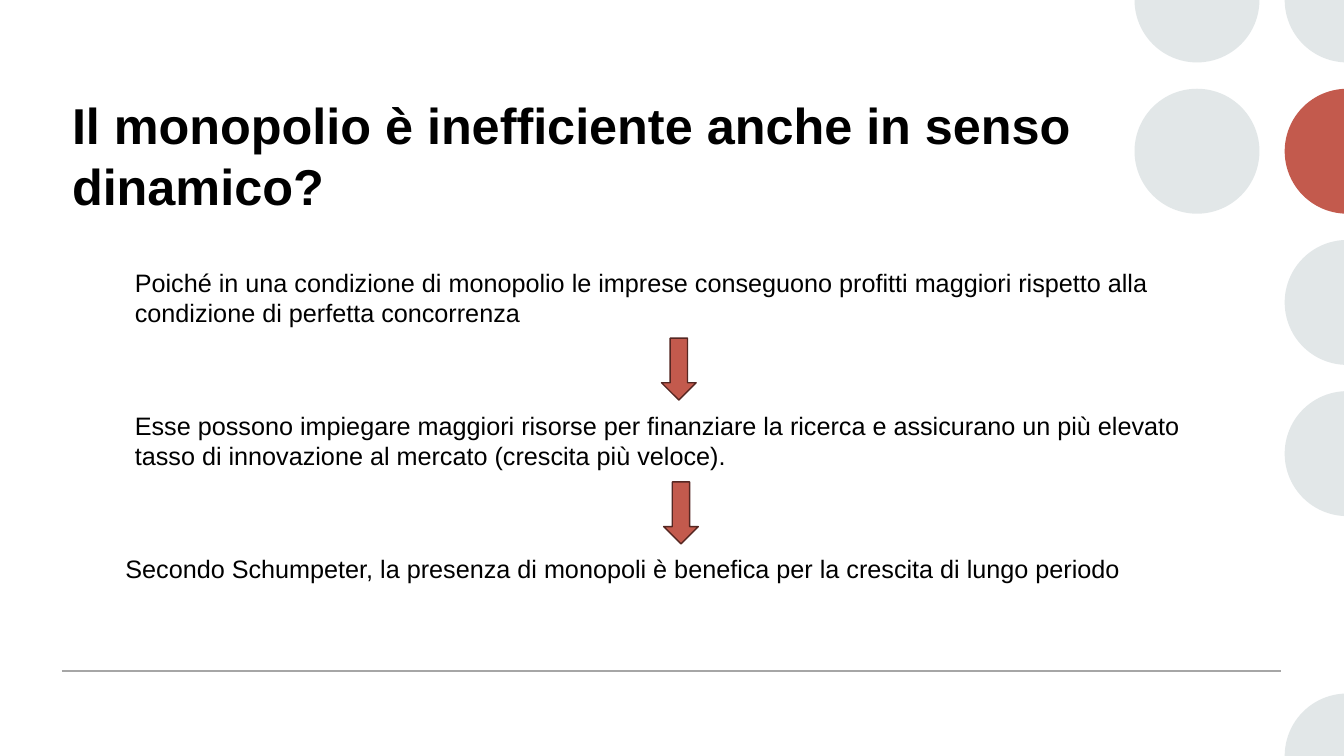
import math
from dataclasses import dataclass
from itertools import pairwise

from lxml import etree
from pptx import Presentation
from pptx import util as u
from pptx.dml.color import RGBColor
from pptx.enum import shapes, text
from pptx.oxml import ns

PX = 9525
SLIDE_WIDTH, SLIDE_HEIGHT = 1280, 720
FONT = "Arial"
COLORS = {
    "text": "000000",
    "pale": "E2E7E8",
    "accent": "C35A4D",
    "arrow_line": "552722",
    "rule": "A6A6A6",
}
DOT_DIAMETER = 119
DOT_RADIUS = DOT_DIAMETER / 2
DOT_COLUMNS = (1140, 1283)
DOT_ROW_PITCH = 144
LAST_ROW = 5
ANGLE_UNITS = 60000
TEXT_WIDTH = 1043


@dataclass(frozen=True)
class Dot:
    column: int
    row: int
    color: str = "pale"


@dataclass(frozen=True)
class Step:
    left: int
    top: int
    height: int
    wording: str


@dataclass(frozen=True)
class Arrow:
    left: int
    top: int
    width: int = 33
    height: int = 59


TITLE = "Il monopolio è inefficiente anche in senso dinamico?"
DOTS = (
    Dot(0, 1), Dot(0, 0), Dot(1, 5), Dot(1, 3), Dot(1, 2),
    Dot(1, 1, "accent"), Dot(1, 0),
)
STEPS = (
    Step(119, 250, 68, "Poiché in una condizione di monopolio le imprese conseguono "
         "profitti maggiori rispetto alla condizione di perfetta concorrenza"),
    Step(119, 386, 68, "Esse possono impiegare maggiori risorse per finanziare la "
         "ricerca e assicurano un più elevato tasso di innovazione al mercato "
         "(crescita più veloce)."),
    Step(110, 522, 38, "Secondo Schumpeter, la presenza di monopoli è benefica per la "
         "crescita di lungo periodo"),
)
ARROWS = (Arrow(630, 322), Arrow(632, 459))


def px(length: float) -> u.Emu:
    return u.Emu(round(length * PX))


def color(name: str) -> RGBColor:
    return RGBColor.from_string(COLORS[name])


def write(frame, wording: str, size: int, bold: bool = False) -> None:
    frame.word_wrap = True
    paragraph = frame.paragraphs[0]
    paragraph.alignment = text.PP_ALIGN.LEFT
    run = paragraph.add_run()
    run.text = wording
    run.font.name = FONT
    run.font.size = u.Pt(size)
    run.font.bold = bold
    run.font.color.rgb = color("text")


def add_title(slide) -> None:
    title = slide.shapes.title
    title.left, title.top = px(59), px(81)
    title.width, title.height = px(TEXT_WIDTH), px(133)
    title.text_frame.auto_size = text.MSO_AUTO_SIZE.NONE
    title.text_frame.vertical_anchor = text.MSO_ANCHOR.MIDDLE
    write(title.text_frame, TITLE, 36, bold=True)


def visible_angles(dot: Dot) -> list[float]:
    """Return the clockwise stops, in degrees, of the arc inside the slide."""
    start = 0.0
    if dot.column == 1:
        start = math.degrees(math.acos((SLIDE_WIDTH - DOT_COLUMNS[1]) / DOT_RADIUS))
    end = 360 - start
    if dot.row == 0:
        end = 180
    elif dot.row == LAST_ROW:
        start = 180
    return [start, *(stop for stop in (90, 180, 270) if start < stop < end), end]


def add_cut_dot(slide, dot: Dot):
    """Draw the part of a circle that lies inside the slide."""
    center_x, center_y = DOT_COLUMNS[dot.column], dot.row * DOT_ROW_PITCH
    angles = visible_angles(dot)
    points = [
        (px(center_x + DOT_RADIUS * math.cos(math.radians(angle))),
         px(center_y + DOT_RADIUS * math.sin(math.radians(angle))))
        for angle in angles
    ]
    if dot.column == 1 and dot.row in (0, LAST_ROW):
        points.append((px(SLIDE_WIDTH), px(center_y)))
    builder = slide.shapes.build_freeform(*points[0])
    builder.add_line_segments(points[1:], close=True)
    shape = builder.convert_to_shape()
    segments = list(shape._element.iter(ns.qn("a:lnTo")))
    for segment, (start, end) in zip(segments, pairwise(angles)):
        arc = etree.Element(ns.qn("a:arcTo"))
        arc.set("wR", str(px(DOT_RADIUS)))
        arc.set("hR", str(px(DOT_RADIUS)))
        arc.set("stAng", str(round(start * ANGLE_UNITS)))
        arc.set("swAng", str(round((end - start) * ANGLE_UNITS)))
        segment.getparent().replace(segment, arc)
    return shape


def add_dot(slide, dot: Dot) -> None:
    if dot.column == 0 and dot.row > 0:
        shape = slide.shapes.add_shape(
            shapes.MSO_SHAPE.OVAL, px(DOT_COLUMNS[0] - DOT_RADIUS),
            px(dot.row * DOT_ROW_PITCH - DOT_RADIUS),
            px(DOT_DIAMETER), px(DOT_DIAMETER))
    else:
        shape = add_cut_dot(slide, dot)
    shape.shadow.inherit = False
    shape.fill.solid()
    shape.fill.fore_color.rgb = color(dot.color)
    shape.line.fill.background()


def add_rule(slide) -> None:
    rule = slide.shapes.add_connector(
        shapes.MSO_CONNECTOR.STRAIGHT, px(59), px(639), px(1220), px(639))
    rule.line.color.rgb = color("rule")
    rule.line.width = u.Pt(1)
    etree.SubElement(rule._element.spPr, ns.qn("a:effectLst"))


def add_step(slide, step: Step) -> None:
    box = slide.shapes.add_textbox(
        px(step.left), px(step.top), px(TEXT_WIDTH), px(step.height))
    box.text_frame.auto_size = text.MSO_AUTO_SIZE.SHAPE_TO_FIT_TEXT
    write(box.text_frame, step.wording, 18)


def add_arrow(slide, arrow: Arrow) -> None:
    shape = slide.shapes.add_shape(
        shapes.MSO_SHAPE.UP_ARROW, px(arrow.left), px(arrow.top),
        px(arrow.width), px(arrow.height))
    shape.rotation = 180
    shape.shadow.inherit = False
    shape.fill.solid()
    shape.fill.fore_color.rgb = color("accent")
    shape.line.color.rgb = color("arrow_line")
    shape.line.width = u.Pt(1)


def main() -> None:
    presentation = Presentation()
    presentation.slide_width = px(SLIDE_WIDTH)
    presentation.slide_height = px(SLIDE_HEIGHT)
    slide = presentation.slides.add_slide(
        presentation.slide_layouts.get_by_name("Title Only"))
    for dot in DOTS:
        add_dot(slide, dot)
    add_rule(slide)
    add_title(slide)
    for step in STEPS:
        add_step(slide, step)
    for arrow in ARROWS:
        add_arrow(slide, arrow)
    presentation.save("out.pptx")


if __name__ == "__main__":
    main()
